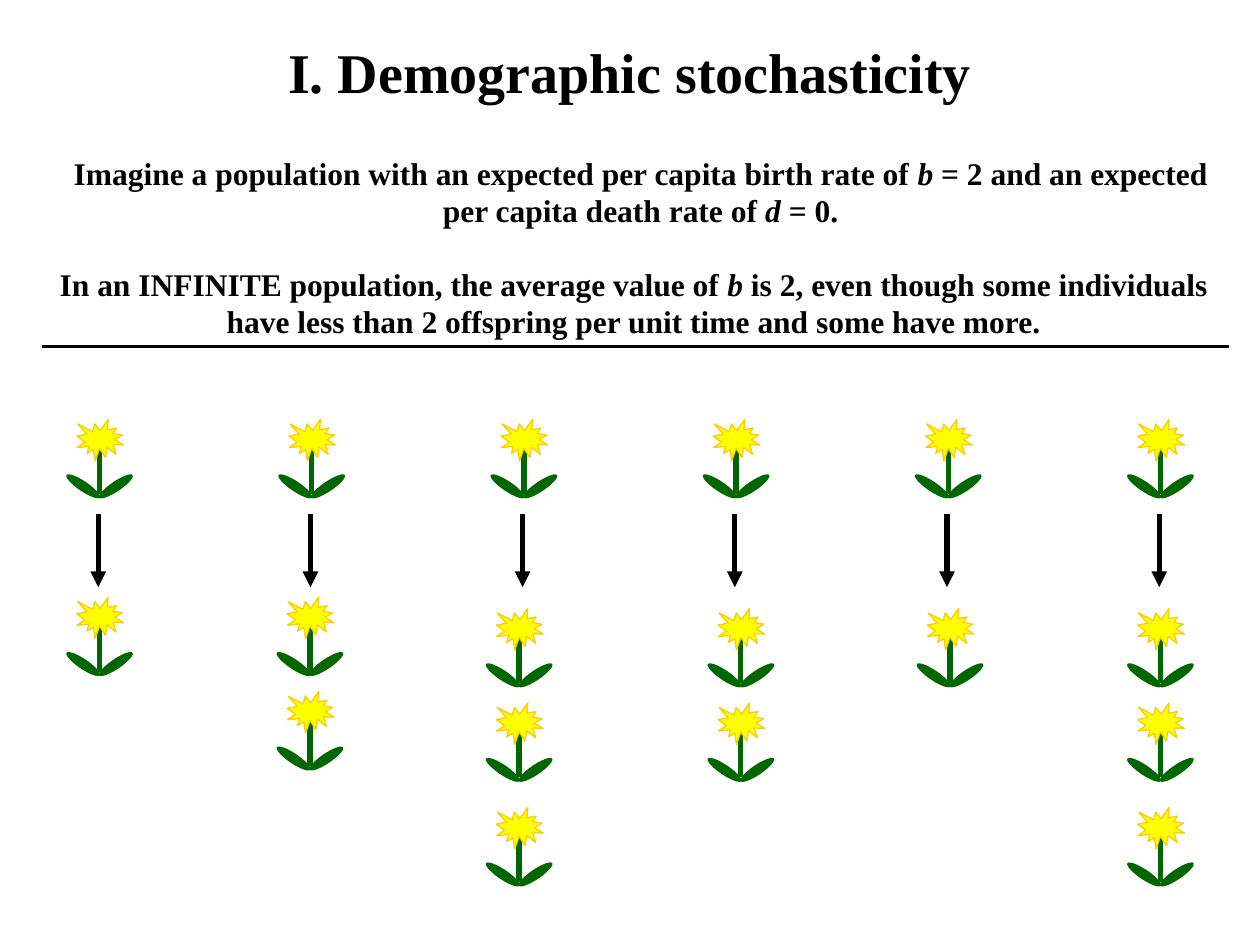
import lxml.etree
import pptx
import pptx.dml.color
import pptx.enum.shapes
import pptx.enum.text
import pptx.oxml.ns
import pptx.util
from pptx.util import Inches

COLORS = {
    "ink": "000000",
    "leaf": "006600",
    "petal": "FFFF00",
    "petal_edge": "FFCC00",
}
FONT = "Times New Roman"
SHAPES = pptx.enum.shapes.MSO_SHAPE


def rgb(name):
    return pptx.dml.color.RGBColor.from_string(COLORS[name])


def add_line(shapes, start, end, color, width):
    line = shapes.add_connector(
        pptx.enum.shapes.MSO_CONNECTOR.STRAIGHT,
        Inches(start[0]), Inches(start[1]), Inches(end[0]), Inches(end[1]))
    line.line.color.rgb = rgb(color)
    line.line.width = pptx.util.Pt(width)
    lxml.etree.SubElement(line._element.spPr, pptx.oxml.ns.qn("a:effectLst"))
    return line


presentation = pptx.Presentation()
presentation.slide_width = Inches(10)
presentation.slide_height = Inches(7.5)
slide = presentation.slides.add_slide(presentation.slide_layouts[6])

# Each paragraph is a list of (text, italic) runs.
texts = [
    ((0, 0.25, 10, 0.63), 32, True,
     [[("I. Demographic stochasticity", False)]]),
    ((0.42, 1.17, 9.33, 0.71), 18, True,
     [[("Imagine a population with an expected per capita birth rate of ", False),
       ("b", True),
       (" = 2 and an expected per capita death rate of ", False),
       ("d", True),
       (" = 0.", False)]]),
    ((0.36, 2.05, 9.34, 0.71), 18, False,
     [[("In an INFINITE population, the average value of ", False),
       ("b ", True),
       ("is 2, even though some individuals", False)],
      [("have less than 2 offspring per unit time and some have more.", False)]]),
]
for box, size, wrap, paragraphs in texts:
    text_frame = slide.shapes.add_textbox(*map(Inches, box)).text_frame
    text_frame.word_wrap = wrap
    text_frame.auto_size = pptx.enum.text.MSO_AUTO_SIZE.SHAPE_TO_FIT_TEXT
    for index, runs in enumerate(paragraphs):
        paragraph = text_frame.paragraphs[0] if index == 0 else text_frame.add_paragraph()
        paragraph.alignment = pptx.enum.text.PP_ALIGN.CENTER
        paragraph.font.name = FONT
        paragraph.font.size = pptx.util.Pt(size)
        paragraph.font.bold = True
        paragraph.font.color.rgb = rgb("ink")
        for text, italic in runs:
            run = paragraph.add_run()
            run.text = text
            if italic:
                run.font.italic = True

add_line(slide.shapes, (0.33, 2.75), (9.75, 2.75), "ink", 2.25)

# Parents stand in one evenly spaced row, each with an arrow to its offspring.
FIRST_X, LAST_X = 0.79, 9.21
PARENT_TOP = 3.33
offspring = [
    (0.79, [4.74]),
    (2.46, [4.74, 5.49]),
    (4.12, [4.83, 5.58, 6.41]),
    (5.88, [4.83, 5.58]),
    (7.54, [4.83]),
    (9.21, [4.83, 5.58, 6.41]),
]
column_step = (LAST_X - FIRST_X) / (len(offspring) - 1)
flowers = []
for column, (offspring_x, tops) in enumerate(offspring):
    parent_x = FIRST_X + column * column_step
    flowers.append((parent_x, PARENT_TOP))
    flowers += [(offspring_x, top) for top in tops]
    arrow_x = parent_x - 0.01
    arrow = add_line(slide.shapes, (arrow_x, 4.08), (arrow_x, 4.66), "ink", 3)
    outline = arrow._element.spPr.find(pptx.oxml.ns.qn("a:ln"))
    lxml.etree.SubElement(outline, pptx.oxml.ns.qn("a:tailEnd"), type="triangle")

# Kind, offset from stem and bloom top, size, rotation, fill
leaves = [(SHAPES.OVAL, -0.17, 0.37, 0.08, 0.32, 304, "leaf"),
          (SHAPES.OVAL, 0.09, 0.37, 0.08, 0.32, 56, "leaf")]
bloom = (SHAPES.EXPLOSION1, -0.18, 0, 0.37, 0.33, 0, "petal")

for stem_x, top in flowers:
    group = slide.shapes.add_group_shape()
    for kind, dx, dy, width, height, rotation, fill in leaves + [bloom]:
        if fill == "petal":
            add_line(group.shapes, (stem_x, top + 0.21), (stem_x, top + 0.59), "leaf", 3)
        shape = group.shapes.add_shape(
            kind, Inches(stem_x + dx), Inches(top + dy), Inches(width), Inches(height))
        shape.rotation = rotation
        shape.shadow.inherit = False
        shape.fill.solid()
        shape.fill.fore_color.rgb = rgb(fill)
        if fill == "petal":
            shape.line.color.rgb = rgb("petal_edge")
            shape.line.width = pptx.util.Pt(0.75)
        else:
            shape.line.fill.background()

presentation.save("out.pptx")
